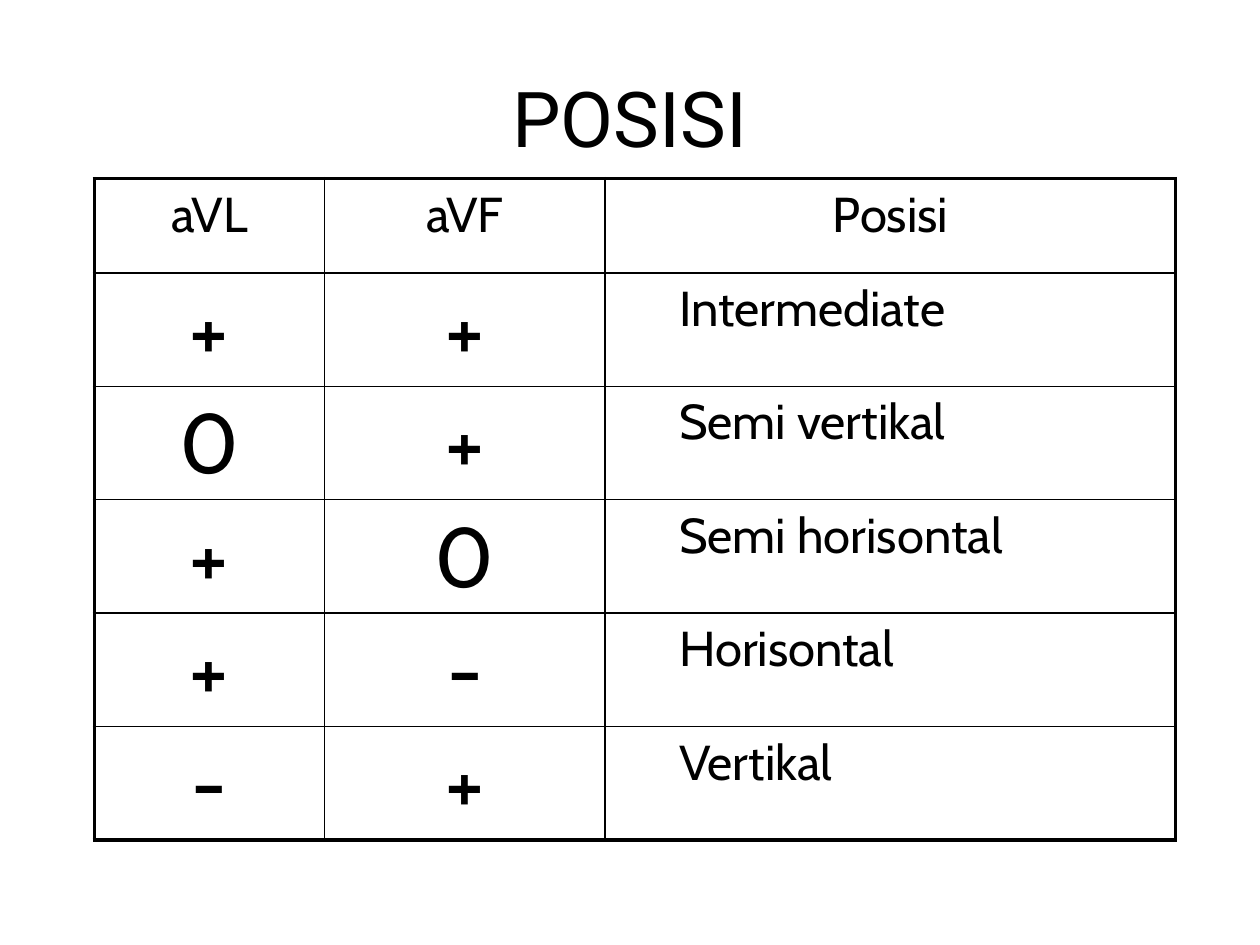
from pptx import Presentation
from pptx.dml.color import RGBColor
from pptx.enum.text import MSO_ANCHOR, PP_ALIGN
from pptx.oxml.ns import qn
from pptx.util import Cm, Pt
from lxml.etree import SubElement, Element

TITLE = "POSISI"
ROWS = [
    ("aVL", "aVF", "Posisi"),
    ("+", "+", "Intermediate"),
    ("0", "+", "Semi vertikal"),
    ("+", "0", "Semi horisontal"),
    ("+", "-", "Horisontal"),
    ("-", "+", "Vertikal"),
]
WIDTHS = (4.64, 5.66, 11.5)
HEAD, BODY = 1.9, 2.08
COLORS = {"ink": "000000"}
THICK, THIN = 2.25, 1


def write(para, text, font, size):
    run = para.add_run()
    run.text = text
    run.font.name = font
    run.font.size = Pt(size)
    run.font.color.rgb = RGBColor.from_string(COLORS["ink"])


def pad(para, indent):
    """Put 20 % space above a paragraph and indent its left edge."""
    props = para._p.get_or_add_pPr()
    props.set("marL", str(Cm(indent)))
    props.set("indent", "0")
    space = Element(qn("a:spcBef"))
    SubElement(space, qn("a:spcPct"), val="20000")
    props.insert(0, space)


def frame(cell, row, col):
    """Draw thick lines on the outer edge and thin lines inside."""
    outer = {
        "L": col == 0,
        "R": col == len(WIDTHS) - 1,
        "T": row == 0,
        "B": row == len(ROWS) - 1,
    }
    props = cell._tc.get_or_add_tcPr()
    for spot, (side, edge) in enumerate(outer.items()):
        line = Element(qn("a:ln" + side), w=str(Pt(THICK if edge else THIN)))
        fill = SubElement(line, qn("a:solidFill"))
        SubElement(fill, qn("a:srgbClr"), val=COLORS["ink"])
        props.insert(spot, line)


def add_title(slide):
    box = slide.shapes.add_textbox(Cm(1.27), Cm(0.76), Cm(22.86), Cm(3.18))
    text = box.text_frame
    text.word_wrap = True
    text.vertical_anchor = MSO_ANCHOR.MIDDLE
    para = text.paragraphs[0]
    para.alignment = PP_ALIGN.CENTER
    write(para, TITLE, "Roboto", 44)


def add_grid(slide):
    high = HEAD + BODY * (len(ROWS) - 1)
    table = slide.shapes.add_table(
        len(ROWS), len(WIDTHS), Cm(1.9), Cm(3.6), Cm(sum(WIDTHS)), Cm(high)
    ).table
    table.first_row = table.horz_banding = False
    for col, width in enumerate(WIDTHS):
        table.columns[col].width = Cm(width)
    for r, words in enumerate(ROWS):
        table.rows[r].height = Cm(BODY if r else HEAD)
        for c, word in enumerate(words):
            cell = table.cell(r, c)
            cell.fill.background()
            frame(cell, r, c)
            sign = r > 0 and c < 2
            name = r > 0 and c == 2
            para = cell.text_frame.paragraphs[0]
            para.alignment = PP_ALIGN.LEFT if name else PP_ALIGN.CENTER
            pad(para, 1.24 if name else 0)
            write(para, word, "Cabin", 48 if sign else 28)


def main():
    deck = Presentation()
    deck.slide_width, deck.slide_height = Cm(25.4), Cm(19.05)
    slide = deck.slides.add_slide(deck.slide_layouts[6])
    add_title(slide)
    add_grid(slide)
    deck.save("out.pptx")


if __name__ == "__main__":
    main()
